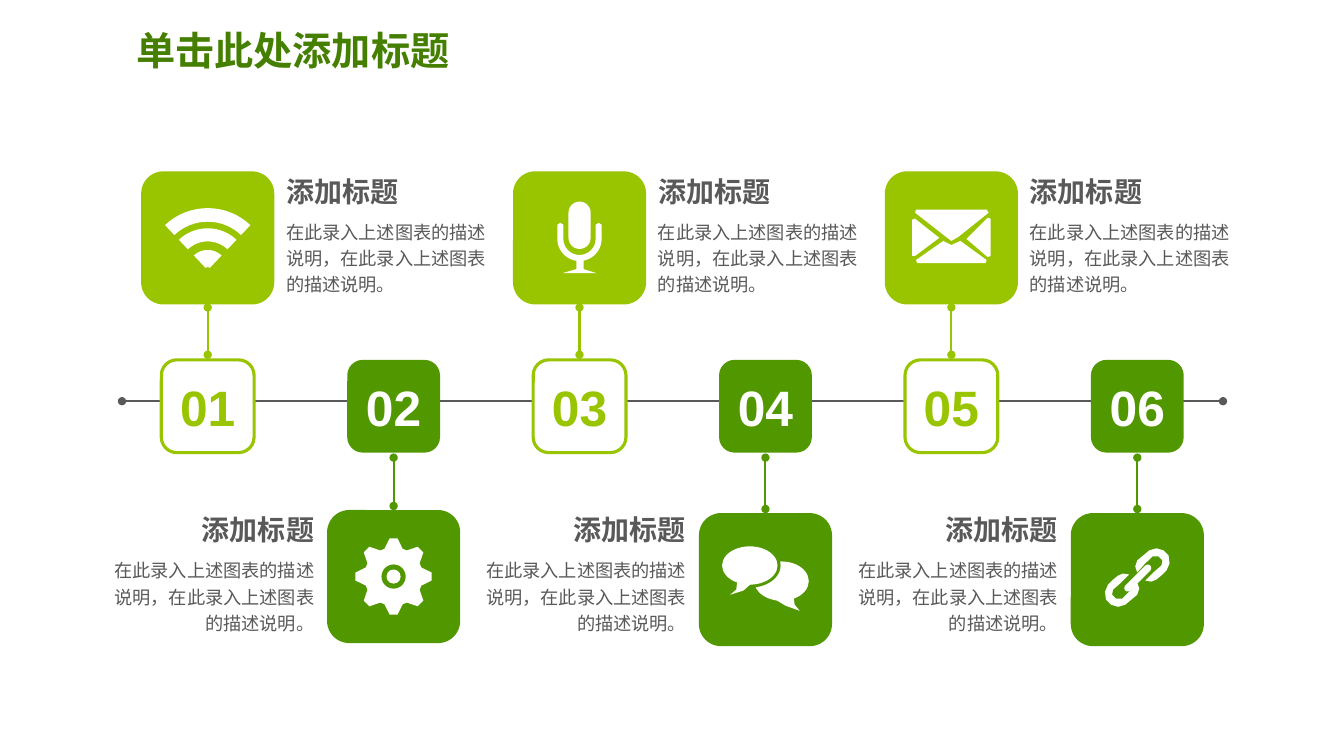
"""Build a six-step timeline slide with icon tiles and captions."""
import math

import lxml.etree
import pptx
import pptx.dml.color
import pptx.enum.shapes
import pptx.enum.text
import pptx.oxml.ns
import pptx.util

Inches = pptx.util.Inches
Shape = pptx.enum.shapes.MSO_SHAPE
Align = pptx.enum.text.PP_ALIGN
Anchor = pptx.enum.text.MSO_ANCHOR
AutoSize = pptx.enum.text.MSO_AUTO_SIZE
qn = pptx.oxml.ns.qn

LIME, GREEN, DARK_GREEN = "99C400", "519700", "447F00"
GRAY, WHITE = "595959", "FFFFFF"
CJK_FONT = "Noto Sans CJK SC"
HEADING = "添加标题"
BODY = "在此录入上述图表的描述说明，在此录入上述图表的描述说明。"
STEP_PITCH, FIRST_CENTER = 1.844, 2.06
TILE, BADGE, AXIS_Y = 1.32, 0.92, 3.98


def color(value):
    return pptx.dml.color.RGBColor.from_string(value)


def apply(target, values):
    for name, value in values.items():
        setattr(target, name, value)


def arc(radius, start, end, center_y=0, count=16):
    angles = [math.radians(start + (end - start) * i / count) for i in range(count + 1)]
    return [(radius * math.sin(a), center_y - radius * math.cos(a)) for a in angles]


class TimelineSlide:
    def __init__(self, presentation):
        self.slide = presentation.slides.add_slide(presentation.slide_layouts[5])
        self.shapes = self.slide.shapes
        self.origin = (0, 0)
        fill = self.slide.background.fill
        fill.solid()
        fill.fore_color.rgb = color(WHITE)

    def group(self, center_x, center_y):
        self.shapes = self.slide.shapes.add_group_shape().shapes
        self.origin = (center_x, center_y)

    def ungroup(self):
        self.shapes, self.origin = self.slide.shapes, (0, 0)

    def paint(self, shape, fill, line=None):
        shape.shadow.inherit = False
        shape.fill.solid()
        shape.fill.fore_color.rgb = color(fill)
        if line:
            shape.line.color.rgb = color(line)
            shape.line.width = pptx.util.Pt(2.25)
        else:
            shape.line.fill.background()
        return shape

    def preset(self, kind, left, top, width, height, fill, line=None):
        x, y = self.origin
        shape = self.shapes.add_shape(
            kind, Inches(x + left), Inches(y + top), Inches(width), Inches(height))
        return self.paint(shape, fill, line)

    def outline(self, points):
        x, y = self.origin
        points = [(Inches(x + px), Inches(y + py)) for px, py in points]
        builder = self.shapes.build_freeform(*points[0])
        builder.add_line_segments(points[1:], close=True)
        return self.paint(builder.convert_to_shape(), WHITE)

    def dotted_line(self, start, end, line_color):
        connector = self.shapes.add_connector(
            pptx.enum.shapes.MSO_CONNECTOR.STRAIGHT, *map(Inches, start + end))
        connector.line.color.rgb = color(line_color)
        connector.line.width = pptx.util.Pt(1.5)
        properties = connector._element.spPr
        line = properties.find(qn("a:ln"))
        for end_name in ("a:headEnd", "a:tailEnd"):
            lxml.etree.SubElement(line, qn(end_name), type="oval")
        lxml.etree.SubElement(properties, qn("a:effectLst"))

    def set_text(self, frame, text, size, text_color, font, bold, frame_values, paragraph_values):
        apply(frame, frame_values)
        paragraph = frame.paragraphs[0]
        apply(paragraph, paragraph_values)
        run = paragraph.add_run()
        run.text = text
        apply(run.font, {"size": pptx.util.Pt(size), "name": font, "bold": bold})
        run.font.color.rgb = color(text_color)
        lxml.etree.SubElement(run._r.get_or_add_rPr(), qn("a:ea"), typeface=CJK_FONT)

    def title(self, text):
        title = self.slide.shapes.title
        apply(title, {"left": Inches(1.25), "top": Inches(0.1),
                      "width": Inches(11.5), "height": Inches(0.85)})
        self.set_text(title.text_frame, text, 28, DARK_GREEN, "Montserrat", True,
                      {"vertical_anchor": Anchor.MIDDLE, "auto_size": AutoSize.NONE,
                       "word_wrap": True},
                      {"alignment": Align.LEFT, "line_spacing": 0.9})

    def badge(self, center_x, text, fill, ink, line):
        shape = self.preset(Shape.ROUNDED_RECTANGLE, center_x - BADGE / 2, 3.57,
                            BADGE, BADGE, fill, line)
        self.set_text(shape.text_frame, text, 35.5, ink, "Arial", True,
                      {"vertical_anchor": Anchor.MIDDLE, "word_wrap": False},
                      {"alignment": Align.CENTER})

    def text_box(self, left, top, width, height, text, size, bold, wrap, paragraph_values):
        box = self.shapes.add_textbox(*map(Inches, (left, top, width, height)))
        self.set_text(box.text_frame, text, size, GRAY, CJK_FONT, bold,
                      {"word_wrap": wrap, "auto_size": AutoSize.SHAPE_TO_FIT_TEXT},
                      paragraph_values)

    def caption(self, center_x, top, upper):
        def left(width):
            return center_x + 0.68 if upper else center_x - 0.69 - width

        align = Align.LEFT if upper else Align.RIGHT
        self.text_box(left(1.32), top, 1.32, 0.44, HEADING, 20, True, False,
                      {"alignment": align})
        self.text_box(left(2.34), top + 0.42, 2.34, 0.89, BODY, 13, False, True,
                      {"alignment": align, "line_spacing": 1.2})

    def wifi_icon(self):
        for inner, outer in ((0.03, 0.2), (0.285, 0.415), (0.48, 0.615)):
            self.outline(arc(outer, -43.5, 43.5, 0.32) + arc(inner, 43.5, -43.5, 0.32))

    def gear_icon(self):
        teeth = [(-18, 0.29), (-6, 0.38), (6, 0.38), (18, 0.29)]
        self.outline([arc(radius, 45 * tooth + angle, 0, count=1)[0]
                      for tooth in range(8) for angle, radius in teeth])
        for radius, fill in ((0.12, GREEN), (0.07, WHITE)):
            self.preset(Shape.OVAL, -radius, -radius, 2 * radius, 2 * radius, fill)

    def microphone_icon(self):
        capsule = self.preset(Shape.ROUNDED_RECTANGLE, -0.11, -0.36, 0.22, 0.47, WHITE)
        capsule.adjustments[0] = 0.5
        self.outline(arc(0.22, 90, 270, 0.01) + [(-0.22, -0.13), (-0.19, -0.15), (-0.16, -0.13)]
                     + arc(0.16, 270, 90, 0.01) + [(0.16, -0.13), (0.19, -0.15), (0.22, -0.13)])
        self.outline([(-0.03, 0.21), (0.04, 0.21), (0.04, 0.31), (0.17, 0.35),
                      (-0.17, 0.35), (-0.03, 0.31)])

    def chat_icon(self):
        self.preset(Shape.OVAL, -0.11, -0.18, 0.54, 0.39, WHITE)
        self.outline([(0.1, 0.2), (0.2, 0.26), (0.34, 0.31), (0.29, 0.25), (0.28, 0.18)])
        self.preset(Shape.OVAL, -0.46, -0.36, 0.61, 0.44, GREEN)
        self.preset(Shape.OVAL, -0.43, -0.33, 0.55, 0.38, WHITE)
        self.outline([(-0.28, 0.02), (-0.29, 0.1), (-0.35, 0.15), (-0.22, 0.11), (-0.14, 0.04)])

    def envelope_icon(self):
        self.outline([(-0.35, -0.28), (0.35, -0.28), (0.37, -0.25), (0.07, -0.01),
                      (0, 0.03), (-0.04, 0), (-0.36, -0.25)])
        self.outline([(0.39, -0.19), (0.39, 0.18), (0.36, 0.19), (0.15, 0.01), (0.36, -0.2)])
        self.outline([(-0.39, -0.18), (-0.39, 0.18), (-0.36, 0.18), (-0.12, 0), (-0.36, -0.19)])
        self.outline([(-0.35, 0.22), (-0.08, 0.03), (0, 0.07), (0.09, 0.03), (0.35, 0.22),
                      (0.34, 0.25), (-0.34, 0.25)])

    def chain_icon(self):
        link = [(0.08, 0.01), (0.16, -0.07), (0.24, -0.14), (0.25, -0.19), (0.21, -0.23),
                (0.15, -0.23), (0.07, -0.15), (0, -0.07), (-0.02, -0.13), (0, -0.19),
                (0.06, -0.24), (0.12, -0.29), (0.19, -0.31), (0.26, -0.29), (0.31, -0.24),
                (0.32, -0.16), (0.29, -0.09), (0.25, -0.05), (0.19, 0), (0.14, 0.02)]
        for sign in (1, -1):
            self.outline([(sign * x, sign * (y + 0.02) - 0.02) for x, y in link])
        bar = self.preset(Shape.ROUNDED_RECTANGLE, -0.17, -0.05, 0.35, 0.07, WHITE)
        bar.adjustments[0] = 0.5
        bar.rotation = -45

    def step(self, number, tile_top, icon):
        center_x = FIRST_CENTER + STEP_PITCH * (number - 1)
        upper = number % 2 == 1
        accent = LIME if upper else GREEN
        badge_colors = (WHITE, LIME, LIME) if upper else (GREEN, WHITE, None)
        self.ungroup()
        self.badge(center_x, f"{number:02d}", *badge_colors)
        self.caption(center_x, 1.68 if upper else 5.04, upper)
        self.group(center_x, tile_top + TILE / 2)
        ends = (3.05, 3.52) if upper else (tile_top - 0.04, 4.54)
        self.dotted_line((center_x, ends[0]), (center_x, ends[1]), accent)
        self.preset(Shape.ROUNDED_RECTANGLE, -TILE / 2, -TILE / 2, TILE, TILE, accent)
        icon()


def main():
    presentation = pptx.Presentation()
    apply(presentation, {"slide_width": Inches(13.33), "slide_height": Inches(7.5)})
    timeline = TimelineSlide(presentation)
    timeline.title("单击此处添加标题")
    timeline.dotted_line((1.21, AXIS_Y), (12.13, AXIS_Y), GRAY)
    steps = [(1.7, timeline.wifi_icon), (5.06, timeline.gear_icon),
             (1.7, timeline.microphone_icon), (5.09, timeline.chat_icon),
             (1.7, timeline.envelope_icon), (5.09, timeline.chain_icon)]
    for number, (tile_top, icon) in enumerate(steps, 1):
        timeline.step(number, tile_top, icon)
    presentation.save("out.pptx")


if __name__ == "__main__":
    main()
